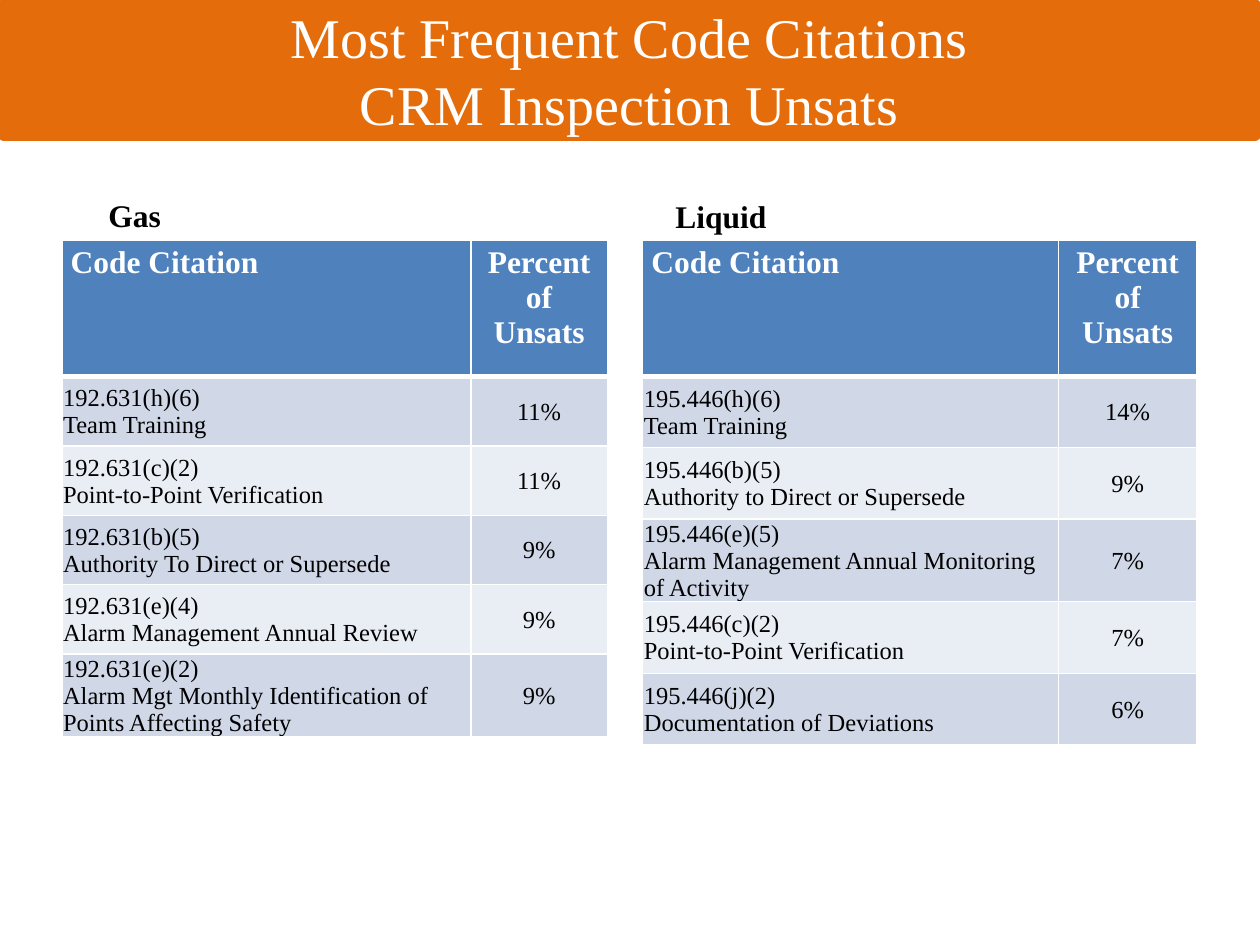
from lxml.etree import SubElement as Sub
from pptx import Presentation
from pptx.dml.color import RGBColor as RGB
from pptx.enum.text import MSO_ANCHOR as Anchor, MSO_AUTO_SIZE as Auto, PP_ALIGN as Align
from pptx.oxml.ns import qn
from pptx.util import Inches, Pt

FONT = "Times New Roman"
HUES = {"banner": "E46C0A", "head": "4F81BD", "odd": "D0D8E8",
        "even": "E9EDF4", "white": "FFFFFF", "black": "000000"}
HEAD = ["Code Citation", "Percent\nof\nUnsats"]
HEAD_H = 1.08
TOP = 1.91

GAS = [
    ["192.631(h)(6)\nTeam Training", "11%"],
    ["192.631(c)(2)\nPoint-to-Point Verification", "11%"],
    ["192.631(b)(5)\nAuthority To Direct or Supersede", "9%"],
    ["192.631(e)(4)\nAlarm Management Annual Review", "9%"],
    ["192.631(e)(2)\nAlarm Mgt Monthly Identification of Points Affecting Safety", "9%"],
]
LIQUID = [
    ["195.446(h)(6)\nTeam Training", "14%"],
    ["195.446(b)(5)\nAuthority to Direct or Supersede", "9%"],
    ["195.446(e)(5)\nAlarm Management Annual Monitoring of Activity", "7%"],
    ["195.446(c)(2)\nPoint-to-Point Verification", "7%"],
    ["195.446(j)(2)\nDocumentation of Deviations", "6%"],
]


def hue(name):
    return RGB.from_string(HUES[name])


def place(shape, *box):
    shape.left, shape.top, shape.width, shape.height = map(Inches, box)


def write(frame, text, size, color, bold=False, align=Align.LEFT):
    frame.text = text
    for par in frame.paragraphs:
        par.alignment = align
        par.space_before = Pt(0)
        font = par.font
        font.name, font.size, font.bold = FONT, Pt(size), bold
        font.color.rgb = hue(color)


def banner(title):
    place(title, 0.03, 0.04, 9.93, 1.03)
    title.fill.solid()
    title.fill.fore_color.rgb = hue("banner")
    title.line.color.rgb = hue("banner")
    title.line.width = Pt(6.75)
    frame = title.text_frame
    frame.auto_size = Auto.NONE
    frame.vertical_anchor = Anchor.MIDDLE
    write(frame, "Most Frequent Code Citations\nCRM Inspection Unsats",
          32, "white", align=Align.CENTER)


def label(body, text, left, width, height):
    """Set a bold heading that rests on the top edge of its table."""
    place(body, left, TOP - height, width, height)
    body.text_frame.auto_size = Auto.NONE
    body.text_frame.vertical_anchor = Anchor.BOTTOM
    write(body.text_frame, text, 18, "black", bold=True)


def edge(cell, top, bottom):
    """Draw white cell borders, with top and bottom widths in points."""
    props = cell._tc.get_or_add_tcPr()
    for side, width in (("L", 1), ("R", 1), ("T", top), ("B", bottom)):
        line = Sub(props, qn(f"a:ln{side}"), w=str(Pt(width)))
        Sub(Sub(line, qn("a:solidFill")), qn("a:srgbClr"), val=HUES["white"])


def fill_cell(cell, text, row, col):
    head = row == 0
    edge(cell, 3 if row == 1 else 1, 3 if head else 1)
    cell.fill.solid()
    cell.fill.fore_color.rgb = hue("head" if head else "odd" if row % 2 else "even")
    cell.vertical_anchor = Anchor.TOP if head else Anchor.MIDDLE
    cell.margin_left = cell.margin_right = Inches(0.07 if head else 0.01)
    cell.margin_top = Inches(0.04 if head else 0.01)
    cell.margin_bottom = Inches(0.04 if head else 0)
    write(cell.text_frame, text, 18 if head else 14, "white" if head else "black",
          head, Align.CENTER if col else Align.LEFT)


def cite_table(slide, data, left, width, heights):
    heights = [HEAD_H, *heights]
    frame = slide.shapes.add_table(len(heights), 2, Inches(left), Inches(TOP),
                                   Inches(width), Inches(sum(heights)))
    table = frame.table
    for col, share in zip(table.columns, (0.75, 0.25)):
        col.width = Inches(width * share)
    for r, (texts, height) in enumerate(zip([HEAD, *data], heights)):
        table.rows[r].height = Inches(height)
        for c, text in enumerate(texts):
            fill_cell(table.cell(r, c), text, r, c)


def main():
    deck = Presentation()
    deck.slide_width, deck.slide_height = Inches(10), Inches(7.5)
    slide = deck.slides.add_slide(deck.slide_layouts.get_by_name("Comparison"))
    title, gas, spare, liquid, extra = slide.placeholders
    for holder in (spare, extra):
        holder.element.getparent().remove(holder.element)
    banner(title)
    label(gas, "Gas", 0.76, 4.23, 0.4)
    label(liquid, "Liquid", 5.26, 3.98, 0.32)
    cite_table(slide, LIQUID, 5.1, 4.4, [0.56, 0.57, 0.65, 0.57, 0.57])
    cite_table(slide, GAS, 0.49, 4.33, [0.55] * 4 + [0.64])
    deck.save("out.pptx")


if __name__ == "__main__":
    main()
